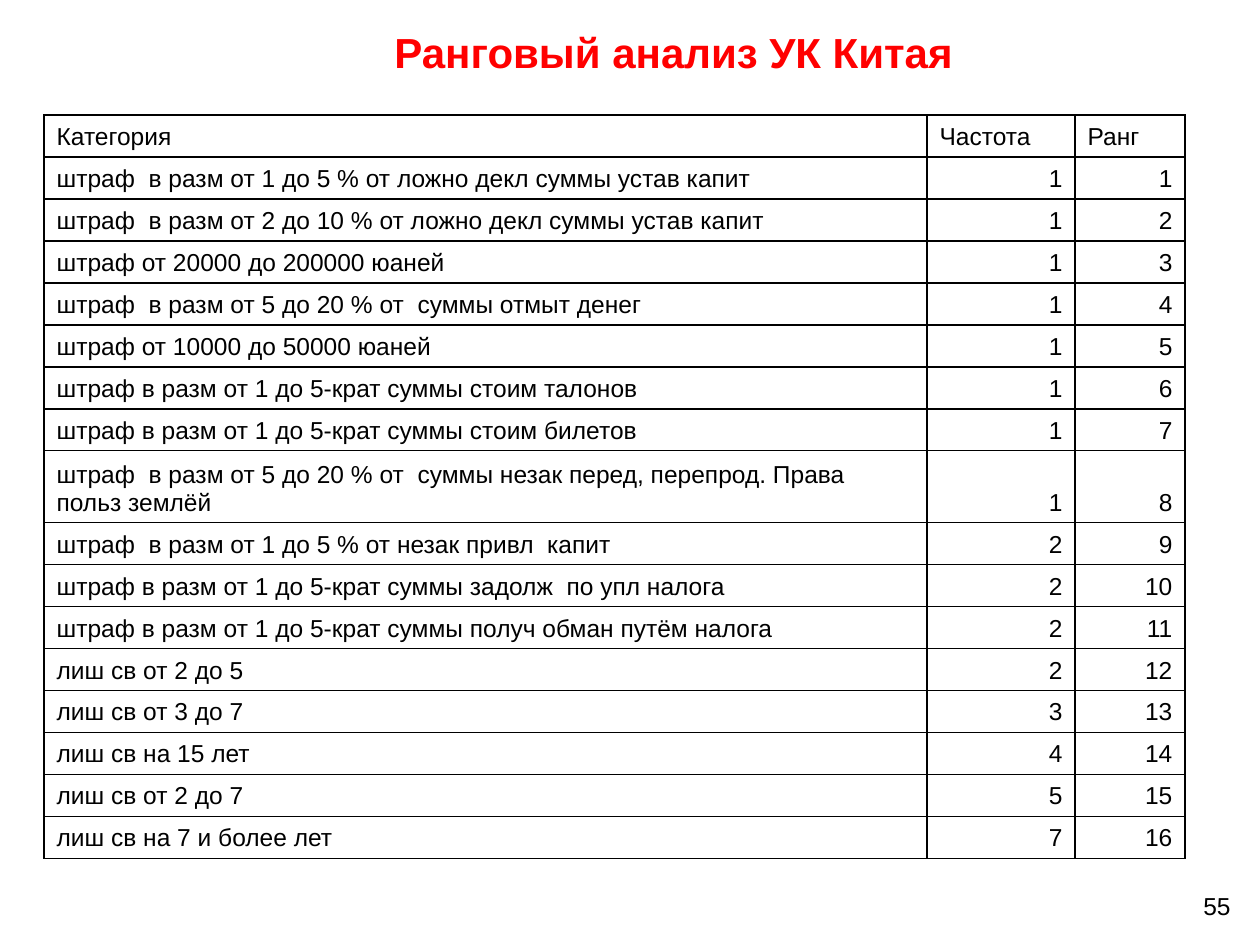
from dataclasses import dataclass

from lxml.etree import SubElement
from pptx import Presentation
from pptx.dml.color import RGBColor
from pptx.enum.text import MSO_ANCHOR, PP_ALIGN
from pptx.oxml.ns import qn
from pptx.util import Pt

EMU_PER_PX = 914400 / 126


@dataclass(frozen=True)
class Theme:
    font: str = "Arial"
    title_size: int = 24
    body_size: int = 14
    title_color: str = "FF0000"
    text_color: str = "000000"
    border_color: str = "000000"
    border_width: int = 1


theme = Theme()


def px(length):
    return round(length * EMU_PER_PX)


def add_text(paragraph, text, size, color, alignment, bold=False):
    paragraph.alignment = alignment
    run = paragraph.add_run()
    run.text = text
    run.font.name = theme.font
    run.font.size = Pt(size)
    run.font.bold = bold
    run.font.color.rgb = RGBColor.from_string(color)


presentation = Presentation()
presentation.slide_width = px(1260)
presentation.slide_height = px(945)
slide = presentation.slides.add_slide(presentation.slide_layouts[5])

# Title
title = slide.shapes.title
title.left, title.top, title.width, title.height = px(154), px(0), px(1051), px(79)
title.text_frame.vertical_anchor = MSO_ANCHOR.MIDDLE
title_paragraph = title.text_frame.paragraphs[0]
title_paragraph.line_spacing = 1.5
add_text(title_paragraph, "Ранговый анализ УК Китая ", theme.title_size,
         theme.title_color, PP_ALIGN.CENTER, bold=True)

# Categories with their frequencies, in rank order
categories = [
    ("штраф  в разм от 1 до 5 % от ложно декл суммы устав капит", 1),
    ("штраф  в разм от 2 до 10 % от ложно декл суммы устав капит", 1),
    ("штраф от 20000 до 200000 юаней", 1),
    ("штраф  в разм от 5 до 20 % от  суммы отмыт денег", 1),
    ("штраф от 10000 до 50000 юаней", 1),
    ("штраф в разм от 1 до 5-крат суммы стоим талонов", 1),
    ("штраф в разм от 1 до 5-крат суммы стоим билетов", 1),
    ("штраф  в разм от 5 до 20 % от  суммы незак перед, перепрод. Права польз землёй", 1),
    ("штраф  в разм от 1 до 5 % от незак привл  капит", 2),
    ("штраф в разм от 1 до 5-крат суммы задолж  по упл налога", 2),
    ("штраф в разм от 1 до 5-крат суммы получ обман путём налога", 2),
    ("лиш св от 2 до 5", 2),
    ("лиш св от 3 до 7", 3),
    ("лиш св на 15 лет", 4),
    ("лиш св от 2 до 7", 5),
    ("лиш св на 7 и более лет", 7),
]
rows = [("Категория", "Частота", "Ранг")]
rows += [(name, frequency, rank)
         for rank, (name, frequency) in enumerate(categories, start=1)]

# Ranking table: one row is taller, for its two lines of text
column_widths = [883, 148, 110]
row_heights = [42] * len(rows)
row_heights[8] = 72
table = slide.shapes.add_table(
    len(rows), len(column_widths), px(44), px(115),
    px(sum(column_widths)), px(sum(row_heights))).table
table.first_row = False
table.horz_banding = False
for column, width in zip(table.columns, column_widths):
    column.width = px(width)

for row_index, values in enumerate(rows):
    table.rows[row_index].height = px(row_heights[row_index])
    for column_index, value in enumerate(values):
        cell = table.cell(row_index, column_index)
        cell.vertical_anchor = MSO_ANCHOR.BOTTOM
        is_number = row_index > 0 and column_index > 0
        add_text(cell.text_frame.paragraphs[0], str(value), theme.body_size,
                 theme.text_color, PP_ALIGN.RIGHT if is_number else PP_ALIGN.LEFT)

        # Borders come before the fill in the cell properties
        properties = cell._tc.get_or_add_tcPr()
        for side in ("a:lnL", "a:lnR", "a:lnT", "a:lnB"):
            line = SubElement(properties, qn(side), w=str(Pt(theme.border_width)))
            line_fill = SubElement(line, qn("a:solidFill"))
            SubElement(line_fill, qn("a:srgbClr"), val=theme.border_color)
        cell.fill.background()

# Slide number
number_box = slide.shapes.add_textbox(px(903), px(885), px(340), px(42))
number_box.text_frame.word_wrap = True
add_text(number_box.text_frame.paragraphs[0], "55", theme.body_size,
         theme.text_color, PP_ALIGN.RIGHT)

presentation.save("out.pptx")
